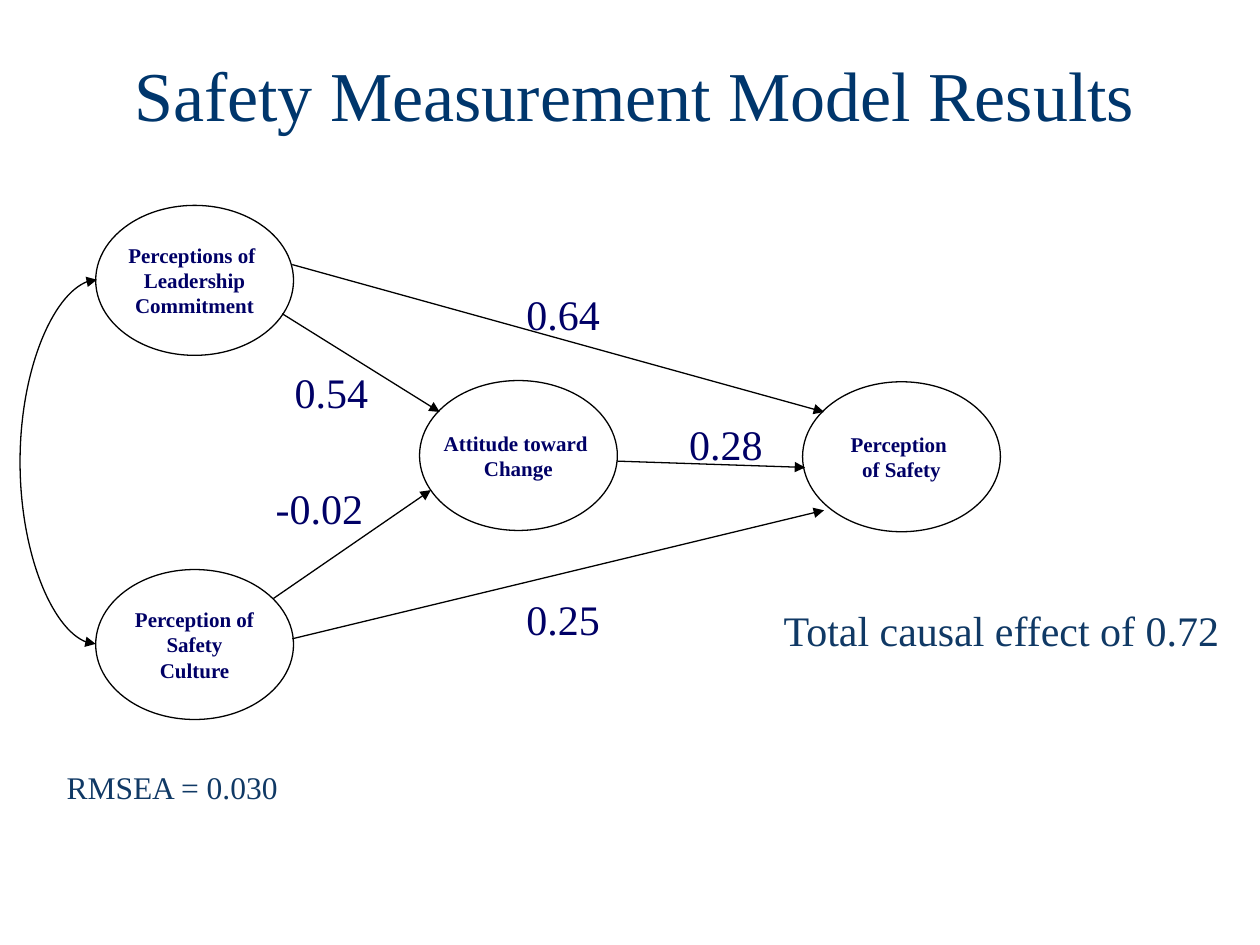
from dataclasses import dataclass

from lxml.etree import SubElement
from pptx import Presentation
from pptx.dml.color import RGBColor
from pptx.enum.shapes import MSO_CONNECTOR, MSO_SHAPE
from pptx.enum.text import MSO_ANCHOR, MSO_AUTO_SIZE, PP_ALIGN
from pptx.oxml.ns import qn
from pptx.util import Emu, Inches, Pt

# The slide is a grid of 100 columns by 75 rows
COLUMNS, ROWS = 100, 75
WIDTH, HEIGHT = Inches(10), Inches(7.5)
FONT = "Times New Roman"
NAVY, TITLE_BLUE, NOTE_BLUE, BLACK = "000066", "00366C", "103965", "000000"
NODE_COLUMNS, NODE_ROWS = 15.7, 11.9


@dataclass
class Factor:
    col: float
    row: float
    text: str


@dataclass
class Path:
    start: tuple[float, float]
    end: tuple[float, float]


@dataclass
class Label:
    col: float
    row: float
    cols: float
    rows: float
    text: str
    size: int = 24
    color: str = NAVY
    wrap: bool = False


FACTORS = [
    Factor(7.6, 45.2, "Perception of\nSafety\nCulture"),
    Factor(7.6, 16.3, "Perceptions of \nLeadership\nCommitment"),
    Factor(33.3, 30.2, "Attitude toward \nChange"),
    Factor(63.7, 30.3, "Perception \nof Safety"),
]
PATHS = [
    Path((21.7, 47.5), (34.2, 38.9)),
    Path((22.4, 24.9), (34.9, 32.7)),
    Path((49, 36.6), (63.9, 37.1)),
    Path((23.2, 21), (65.4, 32.7)),
    Path((23.2, 50.7), (65.4, 40.5)),
]
CORRELATION = Path((7.7, 22.2), (7.6, 51.1))
CORRELATION_LEFT = 1.5  # column the curve bulges out to
LABELS = [
    Label(40.8, 22.4, 7.9, 5, "0.64"),
    Label(22.4, 28.6, 7.9, 5, "0.54"),
    Label(40.8, 46.6, 7.9, 5, "0.25"),
    Label(20.9, 37.8, 9, 5, "-0.02"),
    Label(53.7, 32.7, 7.9, 5, "0.28"),
    Label(61.2, 47.5, 36.9, 5, "Total causal effect of 0.72", color=NOTE_BLUE),
    Label(4.3, 60.5, 19.4, 4, "RMSEA = 0.030", 18, NOTE_BLUE),
    Label(4.3, 3.6, 92.1, 7.7, "Safety Measurement Model Results", 40, TITLE_BLUE, True),
]


def x(cols: float) -> Emu:
    return Emu(round(WIDTH * cols / COLUMNS))


def y(rows: float) -> Emu:
    return Emu(round(HEIGHT * rows / ROWS))


def rgb(color: str) -> RGBColor:
    return RGBColor.from_string(color)


def write(frame, text: str, size: int, color: str, bold: bool, centred: bool) -> None:
    frame.text = text
    for paragraph in frame.paragraphs:
        paragraph.alignment = PP_ALIGN.CENTER if centred else PP_ALIGN.LEFT
        for run in paragraph.runs:
            run.font.name = FONT
            run.font.size = Pt(size)
            run.font.bold = bold
            run.font.color.rgb = rgb(color)


def draw_factor(slide, factor: Factor) -> None:
    oval = slide.shapes.add_shape(
        MSO_SHAPE.OVAL, x(factor.col), y(factor.row), x(NODE_COLUMNS), y(NODE_ROWS))
    oval.shadow.inherit = False
    oval.fill.background()
    oval.line.color.rgb = rgb(BLACK)
    oval.line.width = Pt(0.75)
    oval.text_frame.word_wrap = False
    oval.text_frame.vertical_anchor = MSO_ANCHOR.MIDDLE
    write(oval.text_frame, factor.text, 12, NAVY, bold=True, centred=True)


def draw_path(slide, path: Path, kind=MSO_CONNECTOR.STRAIGHT, both_ends: bool = False):
    (x1, y1), (x2, y2) = path.start, path.end
    arrow = slide.shapes.add_connector(kind, x(x1), y(y1), x(x2), y(y2))
    arrow.line.color.rgb = rgb(BLACK)
    arrow.line.width = Pt(0.75)
    line = arrow.line._get_or_add_ln()
    for tag in ("a:headEnd", "a:tailEnd") if both_ends else ("a:tailEnd",):
        SubElement(line, qn(tag), type="triangle")
    SubElement(arrow._element.spPr, qn("a:effectLst"))
    return arrow


def draw_correlation(slide, path: Path, left: float) -> None:
    curve = draw_path(slide, path, MSO_CONNECTOR.CURVE, both_ends=True)
    # Bulge, as a multiple of the curve's own width
    bulge = (path.start[0] - left) / (path.start[0] - path.end[0])
    geometry = curve._element.spPr.find(qn("a:prstGeom"))
    adjustments = geometry.find(qn("a:avLst"))
    if adjustments is None:
        adjustments = SubElement(geometry, qn("a:avLst"))
    SubElement(adjustments, qn("a:gd"), name="adj1", fmla=f"val {round(bulge * 100000)}")


def draw_label(slide, label: Label) -> None:
    box = slide.shapes.add_textbox(
        x(label.col), y(label.row), x(label.cols), y(label.rows))
    box.text_frame.word_wrap = label.wrap
    box.text_frame.auto_size = MSO_AUTO_SIZE.SHAPE_TO_FIT_TEXT
    write(box.text_frame, label.text, label.size, label.color, False, centred=label.wrap)


def main() -> None:
    deck = Presentation()
    deck.slide_width, deck.slide_height = WIDTH, HEIGHT
    slide = deck.slides.add_slide(deck.slide_layouts[6])

    # Causal paths between the factors
    for path in PATHS:
        draw_path(slide, path)
    # Factors of the model
    for factor in FACTORS:
        draw_factor(slide, factor)
    # Path coefficients, notes and title
    for label in LABELS:
        draw_label(slide, label)
    # Correlation of the two perception factors on the left
    draw_correlation(slide, CORRELATION, CORRELATION_LEFT)

    deck.save("out.pptx")


if __name__ == "__main__":
    main()
